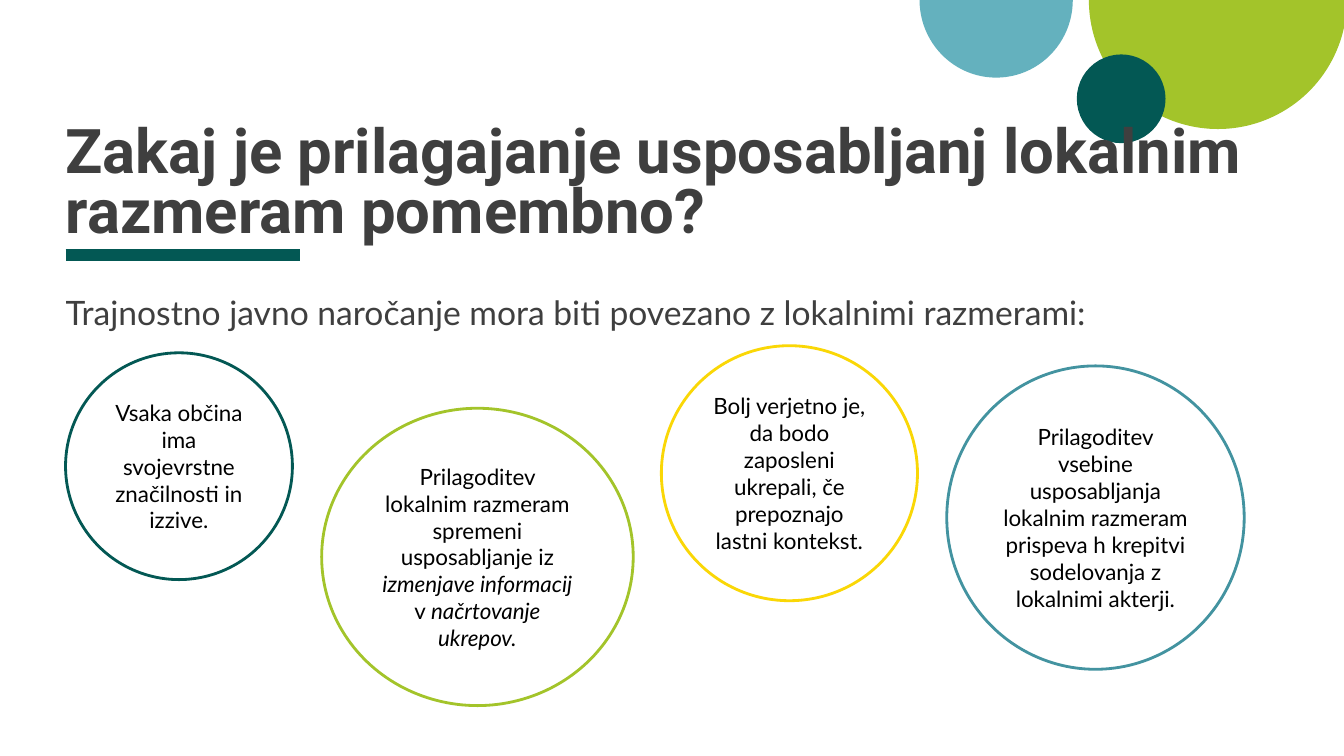
from pptx import Presentation
from pptx.dml.color import RGBColor
from pptx.enum import shapes, text
from pptx.util import Inches, Pt
from lxml import etree

GREEN = RGBColor(0x03, 0x58, 0x54)
LIME = RGBColor(0xA3, 0xC4, 0x2A)
SKY = RGBColor(0x64, 0xB1, 0xBE)
TEAL = RGBColor(0x43, 0x93, 0xA0)
YELLOW = RGBColor(0xFA, 0xD7, 0x06)
GREY = RGBColor(0x3F, 0x3F, 0x3F)
BLACK = RGBColor(0, 0, 0)
A = "http://schemas.openxmlformats.org/drawingml/2006/main"
LEFT, WIDTH = 0.65, 12.09


def style(p, font, size, color, align):
    p.alignment = align
    p.font.name, p.font.size, p.font.color.rgb = font, Pt(size), color


def frame(sp, anchor):
    tf = sp.text_frame
    tf.word_wrap, tf.auto_size = True, text.MSO_AUTO_SIZE.NONE
    tf.vertical_anchor = anchor
    tf.margin_left = tf.margin_right = tf.margin_top = tf.margin_bottom = 0
    return tf


prs = Presentation()
prs.slide_width, prs.slide_height = Inches(13.33), Inches(7.5)
s = prs.slides.add_slide(prs.slide_layouts[5])

# Corner decoration: two lower half discs and a full one
for kind, box, color in [
    (shapes.MSO_SHAPE.PIE, (10.8, -1.28, 2.56, 2.56), LIME),
    (shapes.MSO_SHAPE.PIE, (9.12, -0.77, 1.52, 1.54), SKY),
    (shapes.MSO_SHAPE.OVAL, (10.68, 0.54, 0.88, 0.88), GREEN),
]:
    sp = s.shapes.add_shape(kind, *map(Inches, box))
    sp.shadow.inherit = False
    sp.fill.solid()
    sp.fill.fore_color.rgb = color
    sp.line.fill.background()
    if kind == shapes.MSO_SHAPE.PIE:
        sp.adjustments[0], sp.adjustments[1] = 0, 108  # 0 to 180 degrees

# Title, brought in front of the discs
title = s.shapes.title
title.left, title.top, title.width, title.height = map(Inches, (LEFT, 1.84, WIDTH, 0.59))
title.element.getparent().append(title.element)
tf = frame(title, text.MSO_ANCHOR.BOTTOM)
tf.text = "Zakaj je prilagajanje usposabljanj lokalnim razmeram pomembno?"
p = tf.paragraphs[0]
style(p, "Roboto", 44, GREY, text.PP_ALIGN.LEFT)
p.font.bold, p.line_spacing = True, 0.8

# Rule under the title
rule = s.shapes.add_connector(
    shapes.MSO_CONNECTOR.STRAIGHT, Inches(LEFT), Inches(2.53), Inches(2.98), Inches(2.53))
rule.line.color.rgb, rule.line.width = GREEN, Pt(8)
etree.SubElement(rule.element.spPr, f"{{{A}}}effectLst")

# Lead sentence
lead = s.shapes.add_textbox(*map(Inches, (LEFT, 2.9, WIDTH, 0.4)))
tf = frame(lead, text.MSO_ANCHOR.TOP)
tf.text = "Trajnostno javno naročanje mora biti povezano z lokalnimi razmerami:"
style(tf.paragraphs[0], "Lato", 24, GREY, text.PP_ALIGN.LEFT)

# Reasons in circles; every second run is italic
for box, color, runs in [
    ((LEFT, 3.5, 2.25, 2.25), GREEN,
     ["Vsaka občina ima svojevrstne značilnosti in izzive."]),
    ((3.19, 4.05, 3.09, 2.95), LIME,
     ["Prilagoditev lokalnim razmeram spremeni usposabljanje iz ",
      "izmenjave informacij", " v ", "načrtovanje ukrepov."]),
    ((6.56, 3.43, 2.54, 2.53), YELLOW,
     ["Bolj verjetno je, da bodo zaposleni ukrepali, če prepoznajo lastni kontekst."]),
    ((9.39, 3.63, 2.95, 3.01), TEAL,
     ["Prilagoditev vsebine usposabljanja lokalnim razmeram prispeva h krepitvi "
      "sodelovanja z lokalnimi akterji."]),
]:
    sp = s.shapes.add_shape(shapes.MSO_SHAPE.FLOWCHART_CONNECTOR, *map(Inches, box))
    sp.shadow.inherit = False
    sp.fill.background()
    sp.line.color.rgb, sp.line.width = color, Pt(2)
    tf = frame(sp, text.MSO_ANCHOR.MIDDLE)
    tf.margin_left = tf.margin_right = Inches(0.1)
    tf.margin_top = tf.margin_bottom = Inches(0.05)
    p = tf.paragraphs[0]
    style(p, "Lato", 16, BLACK, text.PP_ALIGN.CENTER)
    for i, words in enumerate(runs):
        r = p.add_run()
        r.text = words
        if i % 2:
            r.font.italic = True

prs.save("out.pptx")
